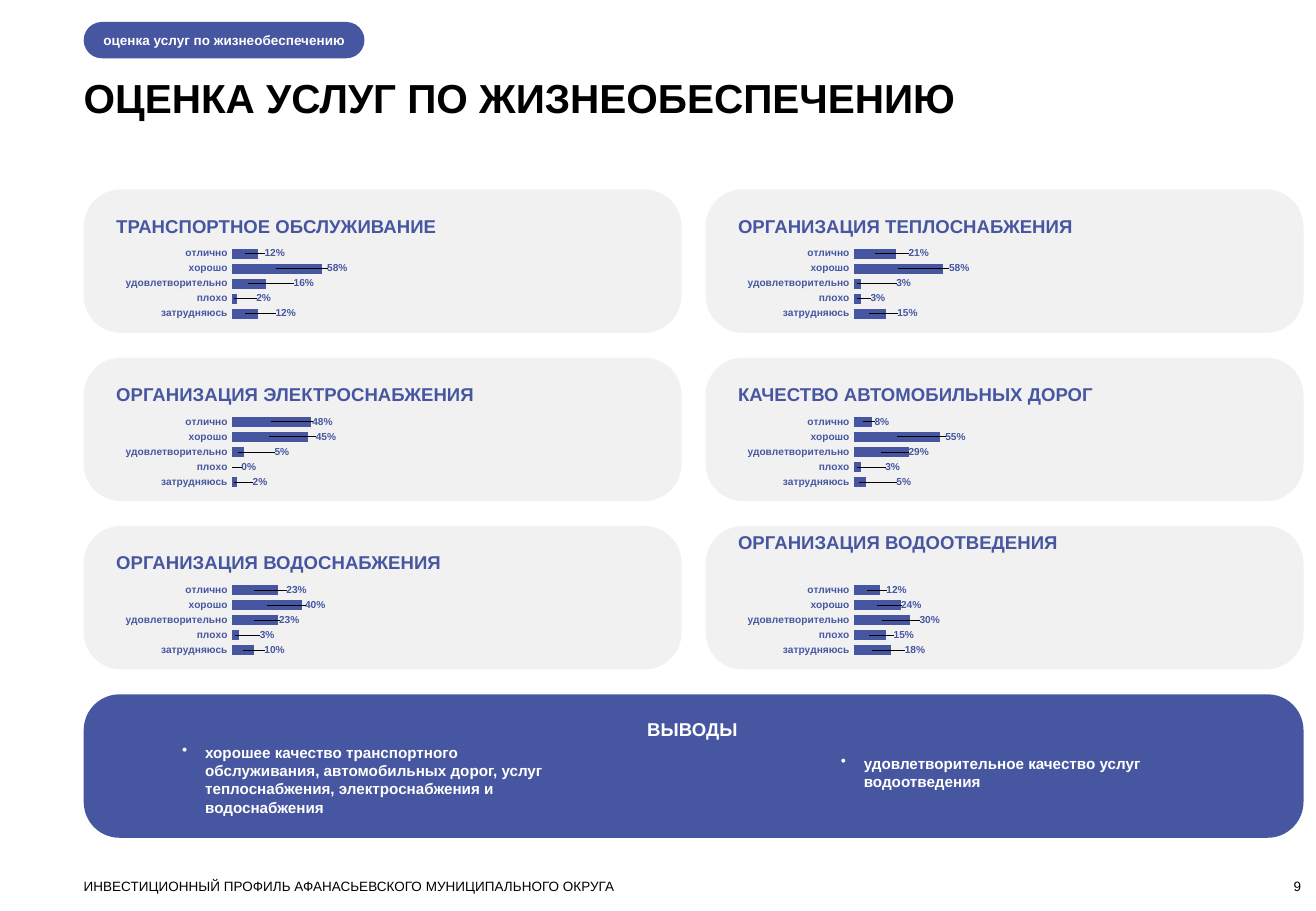
"""Build the slide that rates six public utility services with bar charts."""
from dataclasses import dataclass

import lxml.etree
import pptx
import pptx.chart.data
import pptx.dml.color
import pptx.enum.chart
import pptx.enum.shapes
import pptx.enum.text
import pptx.oxml.ns
import pptx.util

Cm = pptx.util.Cm
qn = pptx.oxml.ns.qn
ALIGN = pptx.enum.text.PP_ALIGN
ANCHOR = pptx.enum.text.MSO_ANCHOR


@dataclass(frozen=True)
class Theme:
    font: str = "Arial"
    blue: pptx.dml.color.RGBColor = pptx.dml.color.RGBColor(0x47, 0x56, 0xA0)
    grey: pptx.dml.color.RGBColor = pptx.dml.color.RGBColor(0xF1, 0xF1, 0xF1)
    white: pptx.dml.color.RGBColor = pptx.dml.color.RGBColor(255, 255, 255)
    black: pptx.dml.color.RGBColor = pptx.dml.color.RGBColor(0, 0, 0)
    title: int = 24
    heading: int = 11
    body: int = 9
    small: int = 8
    label: int = 6


theme = Theme()
deck = pptx.Presentation()
deck.slide_width, deck.slide_height = Cm(27.51), Cm(19.05)
page = deck.slides.add_slide(deck.slide_layouts[5])


def write(box, text, size, color, bold=True, align=ALIGN.LEFT, anchor=ANCHOR.TOP, inset=0):
    frame = box.text_frame
    frame.word_wrap = True
    frame.auto_size = pptx.enum.text.MSO_AUTO_SIZE.NONE
    frame.vertical_anchor = anchor
    frame.margin_left = Cm(inset)
    frame.margin_top = frame.margin_right = frame.margin_bottom = 0
    para = frame.paragraphs[0]
    para.text, para.alignment = text, align
    para.font.name, para.font.size = theme.font, pptx.util.Pt(size)
    para.font.bold, para.font.color.rgb = bold, color
    return para


def add_panel(left, top, width, height, color, radius):
    panel = page.shapes.add_shape(
        pptx.enum.shapes.MSO_SHAPE.ROUNDED_RECTANGLE, Cm(left), Cm(top), Cm(width), Cm(height))
    panel.adjustments[0] = radius
    panel.fill.solid()
    panel.fill.fore_color.rgb = color
    panel.line.fill.background()
    panel.shadow.inherit = False
    return panel


LEFT, TOP = 1.75, 3.96
COLUMN_STEP, ROW_STEP = 13, 3.52
CARD_WIDTH, CARD_HEIGHT = 12.5, 3
PLOT = {"x": 0.315, "y": 0.01, "w": 0.661, "h": 0.967}
GRADES = ["затрудняюсь", "плохо", "удовлетворительно", "хорошо", "отлично"]

title = page.shapes.title
title.left, title.top, title.width, title.height = Cm(LEFT), Cm(1.52), Cm(20.32), Cm(1.02)
write(title, "ОЦЕНКА УСЛУГ ПО ЖИЗНЕОБЕСПЕЧЕНИЮ", theme.title, theme.black)
chip = add_panel(LEFT, 0.46, 5.87, 0.76, theme.blue, 0.5)
write(chip, "оценка услуг по жизнеобеспечению", theme.small, theme.white,
      anchor=ANCHOR.MIDDLE, inset=0.3)

# Each service: name, column, row, heading offset, shares, label centres across the chart.
services = [
    ("ТРАНСПОРТНОЕ ОБСЛУЖИВАНИЕ", 0, 0, 0.53,
     [0.12, 0.02, 0.16, 0.58, 0.12], [0.46, 0.40, 0.51, 0.60, 0.43]),
    ("ОРГАНИЗАЦИЯ ЭЛЕКТРОСНАБЖЕНИЯ", 0, 1, 0.53,
     [0.02, 0, 0.05, 0.45, 0.48], [0.39, 0.36, 0.45, 0.57, 0.56]),
    ("ОРГАНИЗАЦИЯ ВОДОСНАБЖЕНИЯ", 0, 2, 0.53,
     [0.10, 0.03, 0.23, 0.40, 0.23], [0.43, 0.41, 0.47, 0.54, 0.49]),
    ("ОРГАНИЗАЦИЯ ТЕПЛОСНАБЖЕНИЯ", 1, 0, 0.53,
     [0.15, 0.03, 0.03, 0.58, 0.21], [0.46, 0.38, 0.45, 0.60, 0.49]),
    ("КАЧЕСТВО АВТОМОБИЛЬНЫХ ДОРОГ", 1, 1, 0.53,
     [0.05, 0.03, 0.29, 0.55, 0.08], [0.45, 0.42, 0.49, 0.59, 0.39]),
    ("ОРГАНИЗАЦИЯ ВОДООТВЕДЕНИЯ", 1, 2, 0.1,
     [0.18, 0.15, 0.30, 0.24, 0.12], [0.48, 0.45, 0.52, 0.47, 0.43]),
]
for name, column, row, heading_offset, shares, label_centres in services:
    left, top = LEFT + column * COLUMN_STEP, TOP + row * ROW_STEP
    add_panel(left, top, CARD_WIDTH, CARD_HEIGHT, theme.grey, 0.26)
    heading = page.shapes.add_textbox(
        Cm(left + 0.68), Cm(top + heading_offset), Cm(10.5), Cm(0.48))
    write(heading, name, theme.heading, theme.blue)

    data = pptx.chart.data.CategoryChartData(number_format="0%")
    data.categories = GRADES
    data.add_series("Series 1", shares)
    data.add_series("Series 2", [1] * len(GRADES))
    chart = page.shapes.add_chart(
        pptx.enum.chart.XL_CHART_TYPE.BAR_STACKED_100,
        Cm(left + 0.68), Cm(top + 1.17), Cm(7.7), Cm(1.63), data).chart
    chart.has_legend = chart.has_title = False
    chart.font.name, chart.font.size = theme.font, pptx.util.Pt(theme.label)
    chart.font.bold, chart.font.color.rgb = True, theme.blue
    chart.value_axis.visible = chart.value_axis.has_major_gridlines = False
    chart.value_axis.minimum_scale, chart.value_axis.maximum_scale = 0, 1
    chart.category_axis.major_tick_mark = pptx.enum.chart.XL_TICK_MARK.NONE
    chart.category_axis.format.line.fill.background()
    plot = chart.plots[0]
    plot.gap_width, plot.overlap, plot.vary_by_categories = 50, 100, False
    for series, color in zip(plot.series, (theme.blue, theme.grey)):
        series.format.fill.solid()
        series.format.fill.fore_color.rgb = color

    answers = plot.series[0]
    labels = answers.data_labels
    labels.show_value, labels.number_format = True, "0%"
    labels.number_format_is_linked = False
    for index in range(len(GRADES)):
        label = answers.points[index].data_label
        label.position = pptx.enum.chart.XL_LABEL_POSITION.CENTER
        label.font.name, label.font.size = theme.font, pptx.util.Pt(theme.label)
        label.font.bold, label.font.color.rgb = True, theme.blue

    area = plot._element.getparent()
    for old_layout in area.findall(qn("c:layout")):
        area.remove(old_layout)
    area_layout = lxml.etree.Element(qn("c:layout"))
    area.insert(0, area_layout)
    layouts = [(area_layout, {"layoutTarget": "inner", "xMode": "edge", "yMode": "edge", **PLOT})]
    label_elements = answers._element.findall(".//" + qn("c:dLbl"))
    for element, share, centre in zip(label_elements, shares, label_centres):
        bar_centre = PLOT["x"] + PLOT["w"] * share / (1 + share) / 2
        label_layout = lxml.etree.Element(qn("c:layout"))
        element.find(qn("c:idx")).addnext(label_layout)
        layouts.append((label_layout, {"x": round(centre - bar_centre, 3), "y": 0}))
    for layout, settings in layouts:
        manual = lxml.etree.SubElement(layout, qn("c:manualLayout"))
        for setting, value in settings.items():
            lxml.etree.SubElement(manual, qn("c:" + setting)).set("val", str(value))

add_panel(LEFT, TOP + 3 * ROW_STEP, COLUMN_STEP + CARD_WIDTH, CARD_HEIGHT, theme.blue, 0.25)
summary = page.shapes.add_textbox(Cm(LEFT), Cm(15.01), Cm(25.45), Cm(0.48))
write(summary, "ВЫВОДЫ", theme.heading, theme.white, align=ALIGN.CENTER)

conclusions = [
    (3.81, 15.54, 1.55, "хорошее качество транспортного обслуживания, автомобильных дорог, "
     "услуг теплоснабжения, электроснабжения и водоснабжения"),
    (17.58, 15.77, 0.76, "удовлетворительное качество услуг водоотведения"),
]
for left, top, height, text in conclusions:
    box = page.shapes.add_textbox(Cm(left), Cm(top), Cm(7.6), Cm(height))
    properties = write(box, text, theme.body, theme.white)._p.get_or_add_pPr()
    properties.set("marL", str(Cm(0.48)))
    properties.set("indent", str(-Cm(0.48)))
    bullet = lxml.etree.Element(qn("a:buChar"), char="•")
    properties.insert(0, bullet)

footer = page.shapes.add_textbox(Cm(LEFT), Cm(18.36), Cm(20.32), Cm(0.33))
write(footer, "ИНВЕСТИЦИОННЫЙ ПРОФИЛЬ АФАНАСЬЕВСКОГО МУНИЦИПАЛЬНОГО ОКРУГА",
      theme.small, theme.black, bold=False, anchor=ANCHOR.BOTTOM)
number = page.shapes.add_textbox(Cm(25.17), Cm(18.36), Cm(2.03), Cm(0.33))
write(number, "9", theme.small, theme.black, bold=False, align=ALIGN.RIGHT, anchor=ANCHOR.BOTTOM)

deck.save("out.pptx")
